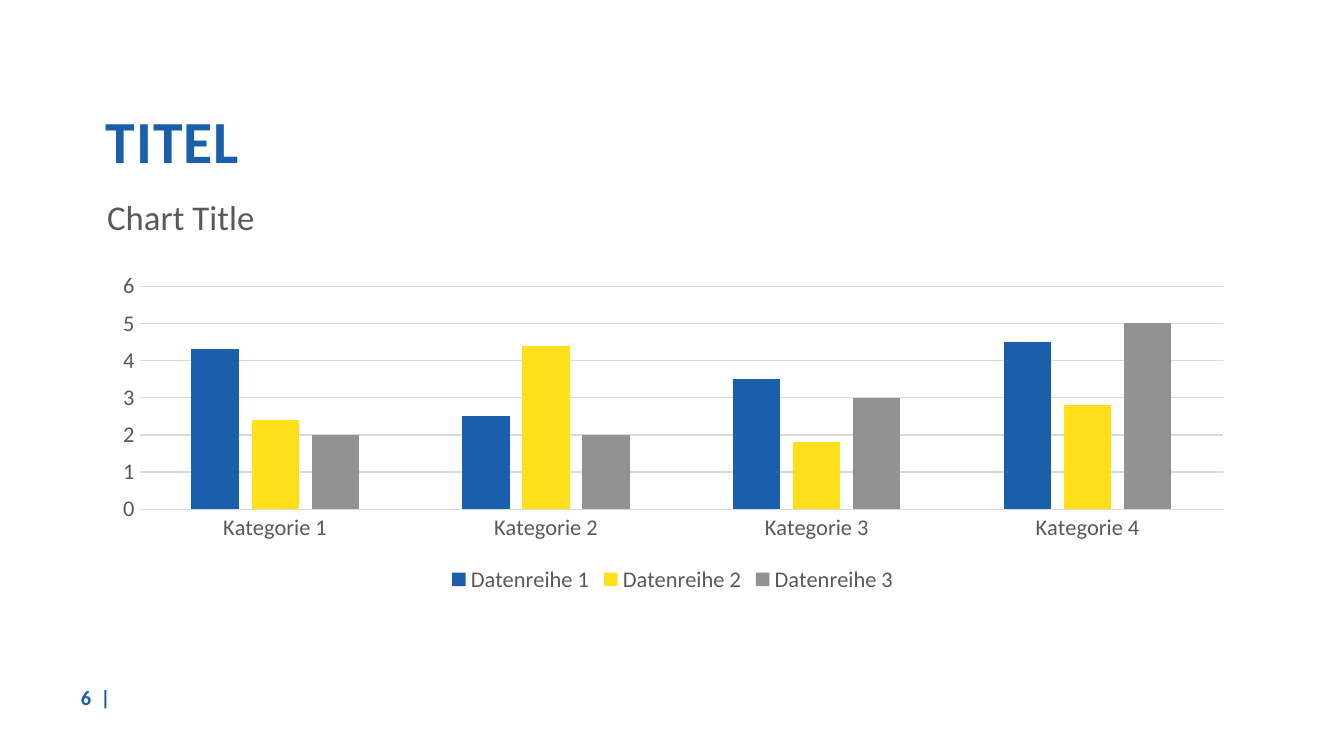
from dataclasses import dataclass

from lxml.etree import SubElement
from pptx import Presentation
from pptx.chart.data import CategoryChartData
from pptx.dml.color import RGBColor
from pptx.enum.chart import XL_CHART_TYPE, XL_LEGEND_POSITION, XL_TICK_MARK
from pptx.enum.text import MSO_ANCHOR, PP_ALIGN
from pptx.oxml.ns import qn
from pptx.util import Inches, Pt


@dataclass(frozen=True)
class Theme:
    font: str = "Calibri"
    blue: str = "1A5FAB"
    yellow: str = "FFDE1A"
    grey: str = "929292"
    text: str = "595959"
    rule: str = "D9D9D9"
    title_size: float = 32
    chart_title_size: float = 18.6
    label_size: float = 12
    number_size: float = 11


class SlideBuilder:
    def __init__(self, page, theme):
        self.page = page
        self.theme = theme

    def style(self, font, size, color, bold=False):
        font.name = self.theme.font
        font.size = Pt(size)
        font.bold = bold
        font.color.rgb = RGBColor.from_string(color)

    def text(self, area, spans, size, anchor, align=PP_ALIGN.LEFT, line_spacing=None):
        """Add one bold line; spans are (words, letter spacing in points)."""
        box = self.page.shapes.add_textbox(*map(Inches, area))
        frame = box.text_frame
        frame.word_wrap = True
        frame.vertical_anchor = anchor
        para = frame.paragraphs[0]
        para.alignment = align
        para.line_spacing = line_spacing
        for words, spacing in spans:
            span = para.add_run()
            span.text = words
            if spacing:
                span.font._element.set("spc", str(int(spacing * 100)))
        self.style(para.font, size, self.theme.blue, bold=True)

    def rule(self, line):
        line.color.rgb = RGBColor.from_string(self.theme.rule)
        line.width = Pt(0.75)

    def place(self, element, index, **fractions):
        """Give a chart part a manual layout, in fractions of the chart."""
        for old in element.findall(qn("c:layout")):
            element.remove(old)
        layout = SubElement(element, qn("c:layout"))
        element.insert(index, layout)
        manual = SubElement(layout, qn("c:manualLayout"))
        settings = {"xMode": "edge", "yMode": "edge", **fractions}
        if "w" in fractions:
            settings = {"layoutTarget": "inner", **settings}
        for name, value in settings.items():
            SubElement(manual, qn(f"c:{name}")).set("val", str(value))

    def column_chart(self, area, title, categories, series):
        theme = self.theme
        data = CategoryChartData()
        data.categories = categories
        for name, values, _ in series:
            data.add_series(name, values)
        chart = self.page.shapes.add_chart(
            XL_CHART_TYPE.COLUMN_CLUSTERED, *map(Inches, area), data
        ).chart
        self.style(chart.font, theme.label_size, theme.text)

        # Title and plot area
        chart.has_title = True
        heading = chart.chart_title
        heading.include_in_layout = False
        para = heading.text_frame.paragraphs[0]
        span = para.add_run()
        span.text = title
        for font in (para.font, span.font):
            self.style(font, theme.chart_title_size, theme.text)
        width, height = area[2:]
        self.place(heading._element, 1, x=0.01 / width, y=0.01 / height)
        plot_area = chart._chartSpace.chart.plotArea
        self.place(plot_area, 0, x=0.3 / width, y=0.75 / height,
                   w=8.06 / width, h=1.66 / height)

        # Columns
        plot = chart.plots[0]
        plot.gap_width = 219
        plot.overlap = -27
        plot.vary_by_categories = False
        for column, (_, _, color) in zip(plot.series, series):
            column.format.fill.solid()
            column.format.fill.fore_color.rgb = RGBColor.from_string(color)

        # Axes
        for axis in (chart.category_axis, chart.value_axis):
            axis.major_tick_mark = axis.minor_tick_mark = XL_TICK_MARK.NONE
            self.style(axis.tick_labels.font, theme.label_size, theme.text)
        self.rule(chart.category_axis.format.line)
        value_axis = chart.value_axis
        value_axis.format.line.fill.background()
        value_axis.minimum_scale, value_axis.maximum_scale = 0, 6
        value_axis.major_unit = 1
        value_axis.has_major_gridlines = True
        self.rule(value_axis.major_gridlines.format.line)

        # Legend
        chart.has_legend = True
        chart.legend.position = XL_LEGEND_POSITION.BOTTOM
        chart.legend.include_in_layout = False
        self.style(chart.legend.font, theme.label_size, theme.text)


def main():
    # Widescreen deck, 16:9
    deck = Presentation()
    deck.slide_width = Inches(10)
    deck.slide_height = Inches(10) * 9 // 16
    theme = Theme()
    slide = SlideBuilder(deck.slides.add_slide(deck.slide_layouts[6]), theme)

    # Page number, with a widened space before the bar
    slide.text((0.1, 5.04, 0.82, 0.3), [("6", 0), (" ", 2.5), ("|", 0)],
               theme.number_size, MSO_ANCHOR.MIDDLE, PP_ALIGN.RIGHT)

    # Title
    slide.text((0.69, 0.42, 8.62, 0.94), [("TITEL", 0.5)],
               theme.title_size, MSO_ANCHOR.BOTTOM, line_spacing=0.9)

    # Chart
    slide.column_chart(
        (0.74, 1.38, 8.53, 3.07),
        "Chart Title",
        [f"Kategorie {number}" for number in range(1, 5)],
        [
            ("Datenreihe 1", (4.3, 2.5, 3.5, 4.5), theme.blue),
            ("Datenreihe 2", (2.4, 4.4, 1.8, 2.8), theme.yellow),
            ("Datenreihe 3", (2, 2, 3, 5), theme.grey),
        ],
    )
    deck.save("out.pptx")


if __name__ == "__main__":
    main()
